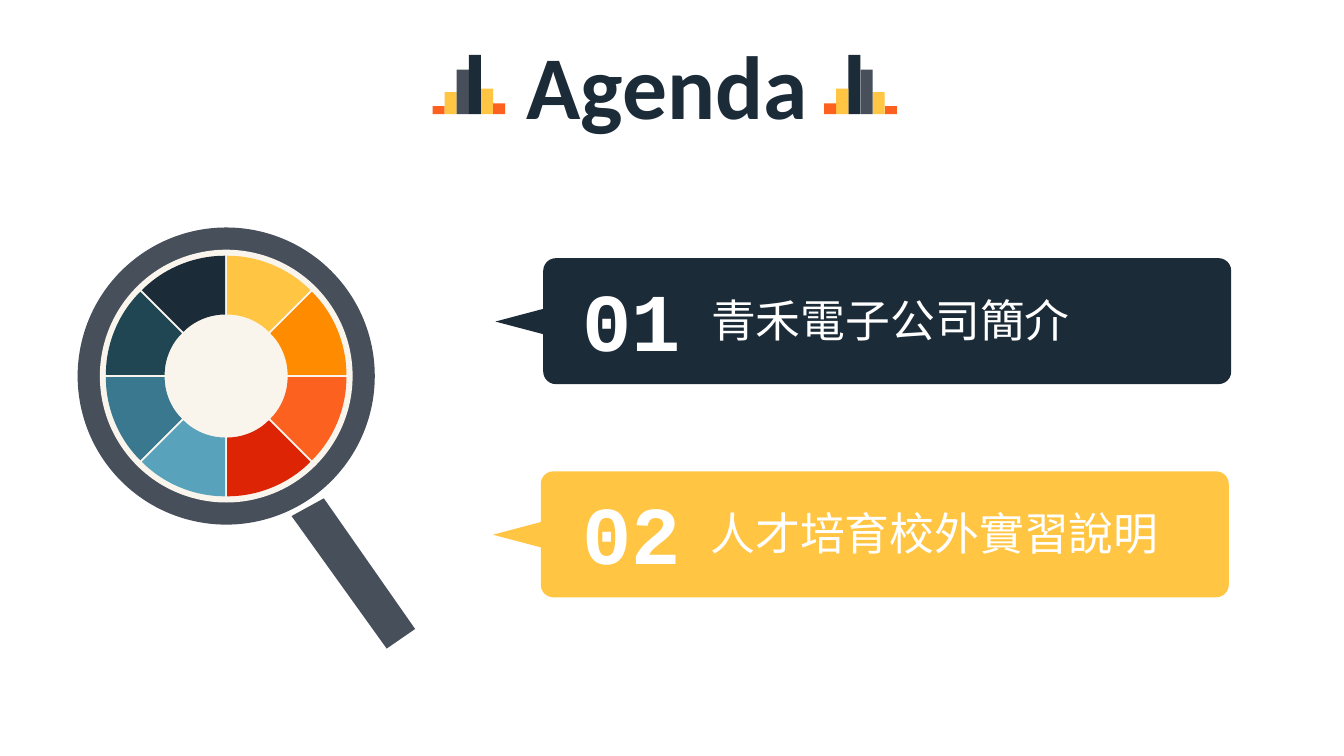
from math import cos, radians, sin

from lxml import etree
from pptx import Presentation
from pptx.chart.data import CategoryChartData
from pptx.dml.color import RGBColor
from pptx.enum.chart import XL_CHART_TYPE
from pptx.enum.shapes import MSO_SHAPE
from pptx.enum.text import MSO_ANCHOR, MSO_AUTO_SIZE, PP_ALIGN
from pptx.oxml.ns import qn
from pptx.util import Pt

RECT = MSO_SHAPE.RECTANGLE
ROUND = MSO_SHAPE.ROUNDED_RECTANGLE
WEDGE = MSO_SHAPE.ISOSCELES_TRIANGLE
OVAL = MSO_SHAPE.OVAL
RING = XL_CHART_TYPE.DOUGHNUT
LEFT, MID = PP_ALIGN.LEFT, PP_ALIGN.CENTER
TOP, FIXED = MSO_ANCHOR.TOP, MSO_AUTO_SIZE.NONE

NAVY = RGBColor(0x1C, 0x2B, 0x38)
SLATE = RGBColor(0x46, 0x4F, 0x5A)
GOLD = RGBColor(0xFF, 0xC5, 0x43)
AMBER = RGBColor(0xFF, 0x8B, 0x00)
ORANGE = RGBColor(0xFC, 0x61, 0x1F)
RED = RGBColor(0xDD, 0x24, 0x05)
SKY = RGBColor(0x58, 0xA2, 0xBC)
BLUE = RGBColor(0x39, 0x78, 0x8F)
TEAL = RGBColor(0x21, 0x46, 0x53)
CREAM = RGBColor(0xF9, 0xF5, 0xED)
WHITE = RGBColor(0xFF, 0xFF, 0xFF)
BLACK = RGBColor(0, 0, 0)

prs = Presentation()
prs.slide_width, prs.slide_height = Pt(720), Pt(405)
slide = prs.slides.add_slide(prs.slide_layouts[5])
shapes = slide.shapes


def block(kind, x, y, w, h, color):
    shape = shapes.add_shape(kind, Pt(x), Pt(y), Pt(w), Pt(h))
    shape.shadow.inherit = False
    shape.fill.solid()
    shape.fill.fore_color.rgb = color
    shape.line.fill.background()
    return shape


def write(box, text, size, name, color, bold, align, wrap):
    frame = box.text_frame
    frame.word_wrap = wrap
    frame.auto_size = FIXED
    frame.vertical_anchor = TOP
    frame.text = text
    para = frame.paragraphs[0]
    para.alignment = align
    para.font.size = Pt(size)
    para.font.name = name
    para.font.bold = bold
    para.font.color.rgb = color


title = shapes.title
title.left, title.top, title.width, title.height = Pt(275), Pt(12.2), Pt(167), Pt(65.5)
write(title, "Agenda", 48, "Calibri", NAVY, True, LEFT, False)

bars = [(4.3, ORANGE), (11.8, GOLD), (23.8, SLATE), (31.8, NAVY), (13.7, GOLD), (5.8, ORANGE)]
step, base = 6.5, 61.2
for i, (high, color) in enumerate(bars):
    for x in (231.7 + step * i, 480.5 - step * (i + 1)):
        block(RECT, x, base - high, step, high, color)

items = [
    ("01", "青禾電子公司簡介", NAVY, 291, 138.3, 373, 208),
    ("02", "人才培育校外實習說明", GOLD, 289.7, 252.5, 372.2, 257),
]
for num, text, color, x, y, left, wide in items:
    card = block(ROUND, x, y, 368.6, 67.5, color)
    card.adjustments[0] = 0.1
    tip = block(WEDGE, x - 19.5, y + 21, 13.7, 25.9, color)
    tip.rotation = 270
    box = shapes.add_textbox(Pt(304.6), Pt(y + 2.6), Pt(67.7), Pt(60.5))
    write(box, num, 44, "Courier New", WHITE, True, MID, True)
    box = shapes.add_textbox(Pt(left), Pt(y + 15.1), Pt(wide), Pt(36))
    write(box, text, 24, "Arial", WHITE, False, MID, False)

cx, cy = 121.2, 201.5
for size, color in ((159.2, SLATE), (135.4, CREAM)):
    block(OVAL, cx - size / 2, cy - size / 2, size, size, color)

grip = [(156.2, 276.5), (207.2, 347.5), (222.4, 337), (173.5, 267)]
path = shapes.build_freeform(Pt(grip[0][0]), Pt(grip[0][1]))
path.add_line_segments([(Pt(x), Pt(y)) for x, y in grip[1:]], close=True)
handle = path.convert_to_shape()
handle.shadow.inherit = False
handle.fill.solid()
handle.fill.fore_color.rgb = SLATE
handle.line.fill.background()

reach, long, thin = 47.5, 31.7, 3.6
for turn in range(0, 360, 45):
    x = cx + reach * cos(radians(turn))
    y = cy + reach * sin(radians(turn))
    spoke = block(RECT, x - long / 2, y - thin / 2, long, thin, CREAM)
    spoke.rotation = turn

data = CategoryChartData()
data.categories = [str(n) for n in range(1, 9)]
data.add_series("Series 1", [12] * 8)
wide, high, ring = 156.2, 148.3, 129.2
chart = shapes.add_chart(
    RING, Pt(cx - wide / 2), Pt(cy - high / 2), Pt(wide), Pt(high), data
).chart
chart.has_legend = False
chart.has_title = False
chart.font.name = "Calibri"
chart.font.size = Pt(18)
chart.font.color.rgb = BLACK
plot = chart.plots[0]
plot.vary_by_categories = True
plot.has_data_labels = False
series = plot.series[0]
for i, color in enumerate([GOLD, AMBER, ORANGE, RED, SKY, BLUE, TEAL, NAVY]):
    part = series.points[i].format
    part.fill.solid()
    part.fill.fore_color.rgb = color
    part.line.fill.background()

burst = etree.Element(qn("c:explosion"), val="5")
series._element.find(qn("c:tx")).addnext(burst)

area = chart._chartSpace.find(".//" + qn("c:plotArea"))
for old in area.findall(qn("c:layout")):
    area.remove(old)
layout = etree.Element(qn("c:layout"))
area.insert(0, layout)
manual = etree.SubElement(layout, qn("c:manualLayout"))
w, h = ring / wide, ring / high
for tag, val in (
    ("layoutTarget", "inner"), ("xMode", "edge"), ("yMode", "edge"),
    ("x", (1 - w) / 2), ("y", (1 - h) / 2), ("w", w), ("h", h),
):
    etree.SubElement(manual, qn("c:" + tag), val=str(val))

prs.save("out.pptx")
